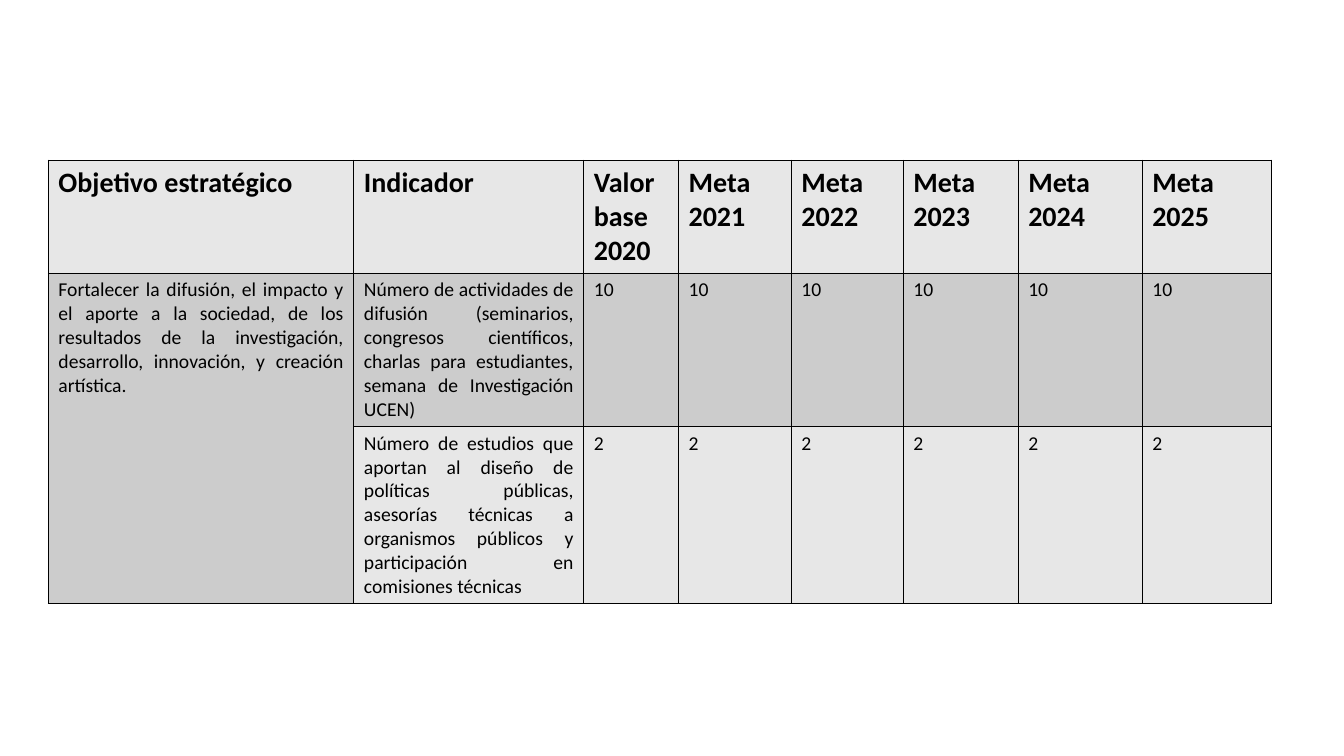
from dataclasses import dataclass

from lxml import etree
from pptx import Presentation
from pptx import util as u
from pptx.dml.color import RGBColor
from pptx.enum import text
from pptx.oxml import ns
from pptx.slide import Slide
from pptx.table import _Cell

PX = 9144


@dataclass(frozen=True)
class Theme:
    font: str = "Calibri"
    ink: str = "000000"
    light: str = "E7E7E7"
    dark: str = "CCCCCC"
    heading_size: int = 20
    body_size: int = 14
    border_width: int = 1


@dataclass(frozen=True)
class GoalRow:
    objective: str
    indicator: str
    values: tuple[str, ...]
    fill: str
    height: int
    heading: bool = False


THEME = Theme()
YEARS = range(2021, 2026)
COLUMN_WIDTHS = (303, 228, 94, 112, 111, 114, 123, 128)
GOAL_ROWS = (
    GoalRow(
        "Objetivo estratégico",
        "Indicador",
        ("Valor base 2020", *(f"Meta {year}" for year in YEARS)),
        THEME.light, 112, heading=True,
    ),
    GoalRow(
        "Fortalecer la difusión, el impacto y el aporte a la sociedad, de los "
        "resultados de la investigación, desarrollo, innovación, y creación artística.",
        "Número de actividades de difusión (seminarios, congresos científicos, "
        "charlas para estudiantes, semana de Investigación UCEN)",
        ("10",) * 6, THEME.dark, 152,
    ),
    GoalRow(
        "",
        "Número de estudios que aportan al diseño de políticas públicas, asesorías "
        "técnicas a organismos públicos y participación en comisiones técnicas",
        ("2",) * 6, THEME.light, 175,
    ),
)


def px(length: int) -> u.Emu:
    return u.Emu(length * PX)


def add_borders(cell: _Cell) -> None:
    properties = cell._tc.get_or_add_tcPr()
    for side in ("lnL", "lnR", "lnT", "lnB"):
        line = etree.SubElement(
            properties, ns.qn(f"a:{side}"), w=str(u.Pt(THEME.border_width))
        )
        solid = etree.SubElement(line, ns.qn("a:solidFill"))
        etree.SubElement(solid, ns.qn("a:srgbClr"), val=THEME.ink)


def format_cell(cell: _Cell, wording: str, goal: GoalRow, justified: bool) -> None:
    add_borders(cell)
    cell.fill.solid()
    cell.fill.fore_color.rgb = RGBColor.from_string(goal.fill)
    cell.text = wording
    paragraph = cell.text_frame.paragraphs[0]
    if justified:
        paragraph.alignment = text.PP_ALIGN.JUSTIFY
    paragraph.font.name = THEME.font
    paragraph.font.size = u.Pt(THEME.heading_size if goal.heading else THEME.body_size)
    paragraph.font.bold = goal.heading
    paragraph.font.color.rgb = RGBColor.from_string(THEME.ink)


def add_goals(slide: Slide) -> None:
    goals = slide.shapes.add_table(
        len(GOAL_ROWS), len(COLUMN_WIDTHS), px(48), px(159),
        px(sum(COLUMN_WIDTHS)), px(sum(goal.height for goal in GOAL_ROWS)),
    ).table
    for column, width in zip(goals.columns, COLUMN_WIDTHS):
        column.width = px(width)
    for row, goal in zip(goals.rows, GOAL_ROWS):
        row.height = px(goal.height)
        wordings = (goal.objective, goal.indicator, *goal.values)
        for index, (cell, wording) in enumerate(zip(row.cells, wordings)):
            format_cell(cell, wording, goal, justified=index < 2 and not goal.heading)
    goals.cell(1, 0).merge(goals.cell(2, 0))


def main() -> None:
    presentation = Presentation()
    presentation.slide_width = px(1333)
    presentation.slide_height = px(750)
    slide = presentation.slides.add_slide(presentation.slide_layouts[6])
    add_goals(slide)
    presentation.save("out.pptx")


if __name__ == "__main__":
    main()
